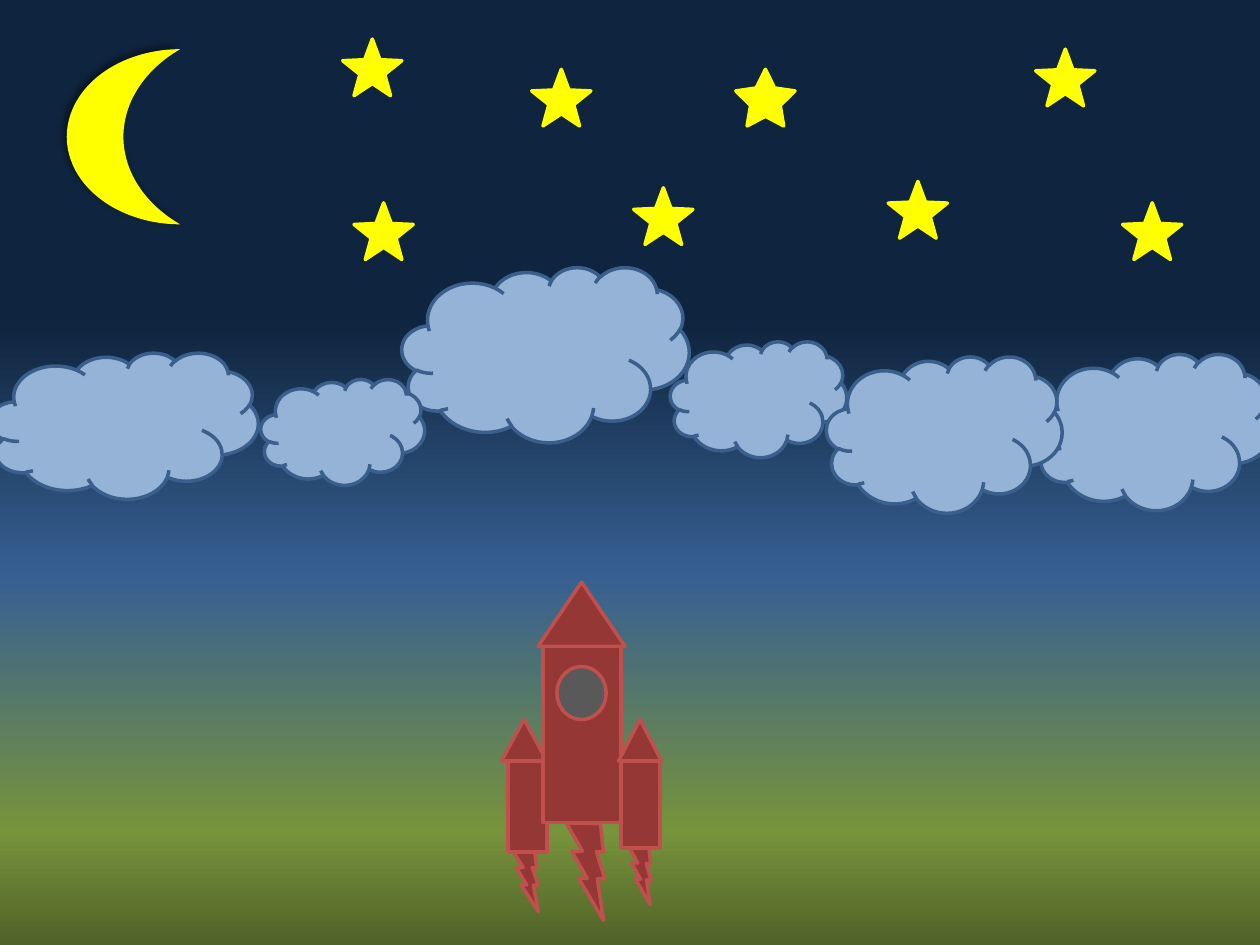
"""Build a night-sky slide with a rocket, clouds, stars and a moon."""
from lxml.etree import SubElement as Sub
from pptx import Presentation
from pptx.dml.color import RGBColor as RGB
from pptx.enum.shapes import MSO_SHAPE as Kind
from pptx.oxml.ns import qn
from pptx.util import Inches, Pt

SKY = [(0, "0F243E"), (34, "0F243E"), (61, "376092"), (88, "77933C"), (100, "4F6228")]
RED, EDGE, GRAY = "953735", "C0504D", "595959"
CLOUD, RIM, GOLD = "95B3D7", "3A5F8C", "FFFF00"

ROCKET = [
    (Kind.LIGHTNING_BOLT, (3.98, 6.74, 0.41, 0.43), RED, 26.2),
    (Kind.RECTANGLE, (4.03, 6.04, 0.31, 0.72), RED, 0),
    (Kind.ISOSCELES_TRIANGLE, (3.98, 5.71, 0.36, 0.33), RED, 0),
    (Kind.ISOSCELES_TRIANGLE, (4.27, 4.62, 0.69, 0.51), RED, 0),
    (Kind.LIGHTNING_BOLT, (4.9, 6.72, 0.38, 0.39), RED, 29.4),
    (Kind.LIGHTNING_BOLT, (4.36, 6.53, 0.62, 0.67), RED, 27.5),
    (Kind.RECTANGLE, (4.31, 5.13, 0.62, 1.4), RED, 0),
    (Kind.RECTANGLE, (4.93, 6.04, 0.31, 0.69), RED, 0),
    (Kind.ISOSCELES_TRIANGLE, (4.91, 5.71, 0.34, 0.33), RED, 0),
    (Kind.OVAL, (4.42, 5.29, 0.39, 0.42), GRAY, 0),
]
CLOUDS = [
    (-0.08, 2.8, 2.13, 1.16),
    (3.19, 2.12, 2.28, 1.39),
    (5.32, 2.71, 1.4, 0.92),
    (2.07, 3.01, 1.3, 0.84),
    (8.22, 2.81, 1.87, 1.24),
    (6.56, 2.83, 1.87, 1.24),
]
STAR = (0.47, 0.45)
STARS = [
    (4.22, 0.55, 0.21), (5.84, 0.55, 0.25), (2.72, 0.31, 0.21), (2.81, 1.61, 0.21),
    (5.03, 1.49, 0.21), (8.91, 1.61, 0.21), (8.22, 0.39, 0.21), (7.05, 1.44, 0.21),
]
MOON = (0.53, 0.39, 0.9, 1.39)


def tint(text):
    return RGB.from_string(text)


def draw(home, kind, box, fill, line=None, turn=0):
    shape = home.add_shape(kind, *map(Inches, box))
    shape.shadow.inherit = False
    shape.rotation = turn
    shape.fill.solid()
    shape.fill.fore_color.rgb = tint(fill)
    if line:
        shape.line.color.rgb = tint(line)
        shape.line.width = Pt(2)
    else:
        shape.line.fill.background()
    return shape


def paint(slide, stops):
    fill = slide.background.fill
    fill.gradient()
    fill.gradient_angle = 270
    row = next(slide.element.iter(qn("a:gsLst")))
    for old in list(row):
        row.remove(old)
    for pos, hue in stops:
        stop = Sub(row, qn("a:gs"), pos=str(pos * 1000))
        Sub(stop, qn("a:srgbClr"), val=hue)


def shade(shape, hue, alpha, blur, dist, angle):
    glow = next(shape.element.iter(qn("a:effectLst")))
    cast = Sub(glow, qn("a:outerShdw"), blurRad=str(Pt(blur)), dist=str(Pt(dist)),
               dir=str(angle * 60000), algn="br", rotWithShape="0")
    tone = Sub(cast, qn("a:srgbClr"), val=hue)
    Sub(tone, qn("a:alpha"), val=str(alpha * 1000))


def main():
    deck = Presentation()
    deck.slide_width, deck.slide_height = Inches(10), Inches(7.5)
    slide = deck.slides.add_slide(deck.slide_layouts[6])
    paint(slide, SKY)
    shapes = slide.shapes

    rocket = shapes.add_group_shape().shapes
    for kind, box, fill, turn in ROCKET:
        draw(rocket, kind, box, fill, EDGE, turn)

    for box in CLOUDS[:-1]:
        draw(shapes, Kind.CLOUD, box, CLOUD, RIM)

    stars = shapes.add_group_shape().shapes
    for left, top, depth in STARS:
        star = draw(stars, Kind.STAR_5_POINT, (left, top, *STAR), GOLD, GOLD)
        star.adjustments[0] = depth

    moon = draw(shapes, Kind.MOON, MOON, GOLD)
    shade(moon, "000000", 40, 4, 3, 225)
    draw(shapes, Kind.CLOUD, CLOUDS[-1], CLOUD, RIM)
    deck.save("out.pptx")


if __name__ == "__main__":
    main()
